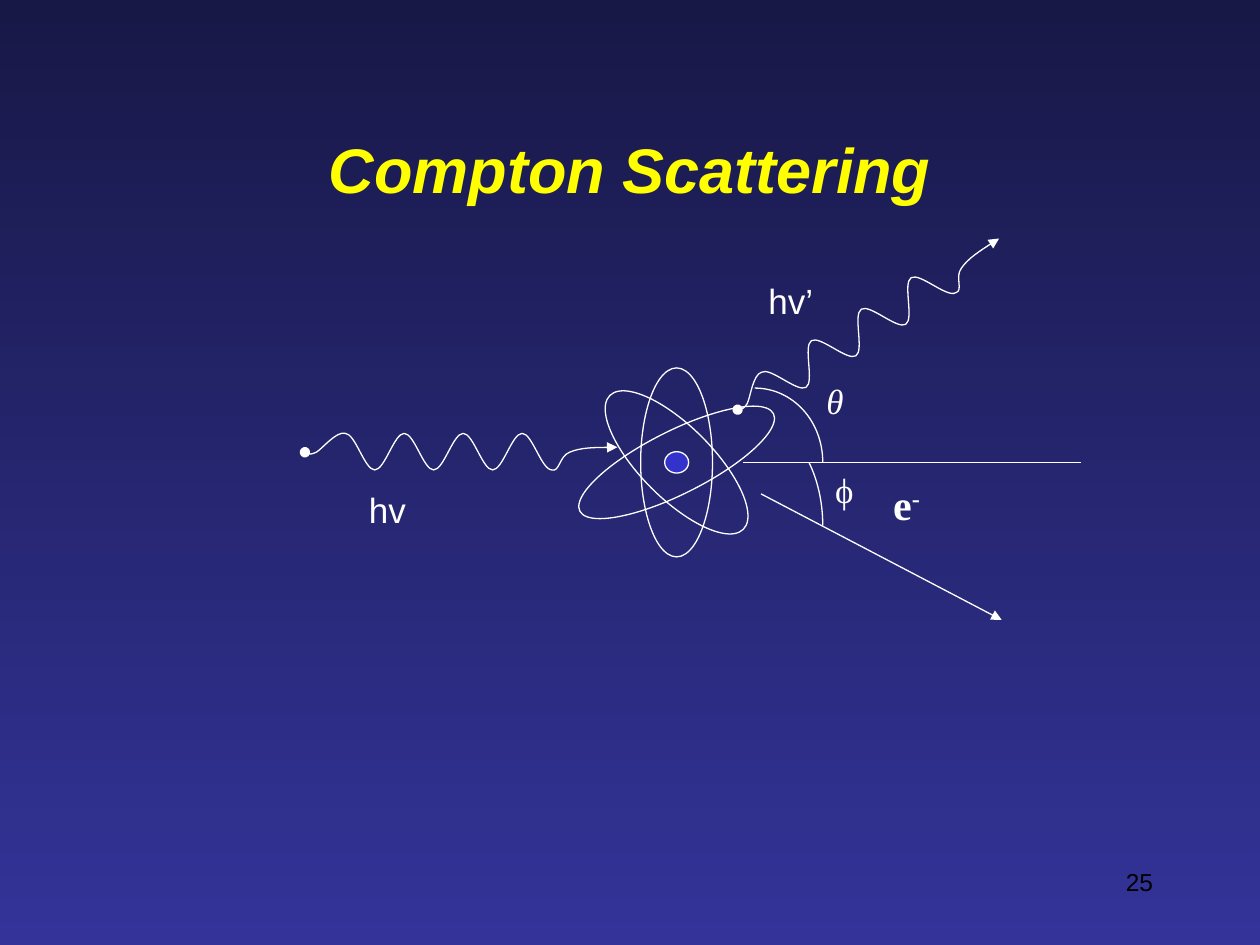
from pptx import Presentation
from pptx.dml.color import RGBColor
from pptx.enum.shapes import MSO_CONNECTOR, MSO_SHAPE
from pptx.enum.text import MSO_ANCHOR, PP_ALIGN
from pptx.oxml.ns import qn
from pptx.oxml.xmlchemy import OxmlElement
from pptx.util import Inches, Pt

ELLIPSE = MSO_SHAPE.OVAL
STRAIGHT = MSO_CONNECTOR.STRAIGHT
LEFT, CENTER, RIGHT = PP_ALIGN.LEFT, PP_ALIGN.CENTER, PP_ALIGN.RIGHT
TOP, MIDDLE = MSO_ANCHOR.TOP, MSO_ANCHOR.MIDDLE
WHITE = "FFFFFF"
SERIF = "Times New Roman"


def color(hex_code):
    """Turn a hex string into a colour."""
    return RGBColor.from_string(hex_code)


def set_background(slide, top_color, bottom_color):
    """Fill the slide with a vertical gradient."""
    fill = slide.background.fill
    fill.gradient()
    fill.gradient_angle = 270
    for stop, hex_code in zip(fill.gradient_stops, (top_color, bottom_color)):
        stop.color.rgb = color(hex_code)


def style_line(line, head=None, tail=None):
    """Make a thin white line with optional end marks."""
    line.color.rgb = color(WHITE)
    line.width = Pt(0.75)
    for tag, mark in (("a:headEnd", head), ("a:tailEnd", tail)):
        if mark:
            end = OxmlElement(tag)
            end.set("type", mark)
            line._get_or_add_ln().append(end)


def add_label(slide, text, left, top, width, height, size=20, font="Arial",
              fill=WHITE, bold=False, italic=False, align=LEFT, anchor=TOP,
              superscript=""):
    """Add one line of text, with an optional superscript after it."""
    frame = slide.shapes.add_textbox(
        Inches(left), Inches(top), Inches(width), Inches(height)).text_frame
    frame.word_wrap = True
    frame.vertical_anchor = anchor
    paragraph = frame.paragraphs[0]
    paragraph.alignment = align
    for part in filter(None, (text, superscript)):
        run = paragraph.add_run()
        run.text = part
        run.font.size = Pt(size)
        run.font.name = font
        run.font.bold = bold
        run.font.italic = italic
        run.font.color.rgb = color(fill)
    if superscript:
        run._r.get_or_add_rPr().set("baseline", "32000")


def add_curve(slide, points, rotation=0, head=None, tail=None):
    """Draw a chain of cubic curves: a start, then three points for each."""
    start, *rest = [(Inches(x), Inches(y)) for x, y in points]
    builder = slide.shapes.build_freeform(*start)
    builder.add_line_segments(rest, close=False)
    curve = builder.convert_to_shape()
    segments = list(curve._element.iter(qn("a:lnTo")))
    for i in range(0, len(segments), 3):
        bezier = OxmlElement("a:cubicBezTo")
        segments[i].addprevious(bezier)
        for segment in segments[i:i + 3]:
            bezier.append(segment[0])
            segment.getparent().remove(segment)
    curve.rotation = rotation
    curve.shadow.inherit = False
    curve.fill.background()
    style_line(curve.line, head, tail)


def add_photon(slide, left, axis, rotation=0):
    """Draw a wavy photon arrow starting at left on its axis."""
    crest, trough, step = -0.15, 0.14, 0.234
    wave = [(0, 0), (0.02, 0.01), (0.04, 0.02), (0.09, 0),
            (0.14, -0.03), (0.25, -0.17), (0.32, crest)]
    for i in range(7):
        x = 0.32 + i * step
        before, after = (trough, crest) if i % 2 else (crest, trough)
        wave += [(x + 0.08, before), (x + step - 0.08, after), (x + step, after)]
    wave[-1] = (1.96, trough)
    wave += [(2.02, 0.16), (2.02, 0.03), (2.1, 0),
             (2.19, -0.04), (2.41, -0.04), (2.48, -0.04)]
    add_curve(slide, [(left + x, axis + y) for x, y in wave],
              rotation, head="oval", tail="triangle")


def add_atom(slide, center_x, center_y):
    """Draw three electron orbits around a nucleus as one group."""
    atom = slide.shapes.add_group_shape()
    parts = ((0.57, 1.5, 0, None), (0.5, 1.72, 63.3, None),
             (0.57, 1.5, 315.1, None), (0.19, 0.17, 0, "3333CC"))
    for width, height, rotation, fill in parts:
        part = atom.shapes.add_shape(
            ELLIPSE, Inches(center_x - width / 2), Inches(center_y - height / 2),
            Inches(width), Inches(height))
        part.rotation = rotation
        part.shadow.inherit = False
        style_line(part.line)
        if fill:
            part.fill.solid()
            part.fill.fore_color.rgb = color(fill)
        else:
            part.fill.background()


def add_ray(slide, start, end, tail=None):
    """Draw a straight line from start to end."""
    ray = slide.shapes.add_connector(
        STRAIGHT, *(Inches(value) for value in (*start, *end)))
    style_line(ray.line, tail=tail)
    ray._element.spPr.append(OxmlElement("a:effectLst"))


def main():
    """Build the Compton scattering slide."""
    deck = Presentation()
    deck.slide_width, deck.slide_height = Inches(10), Inches(7.5)
    slide = deck.slides.add_slide(deck.slide_layouts[6])
    set_background(slide, "181847", "333399")

    add_label(slide, "Compton Scattering", 0.75, 0.67, 8.5, 1.33, size=36,
              fill="FFFF00", bold=True, italic=True, align=CENTER, anchor=MIDDLE)
    add_label(slide, "e", 6.99, 3.75, 1.14, 0.5, size=24, font=SERIF,
              bold=True, superscript="-")

    add_photon(slide, 2.42, 3.59)
    add_photon(slide, 5.66, 2.59, rotation=327.7)
    add_atom(slide, 5.37, 3.67)
    add_ray(slide, (6.04, 3.92), (7.95, 4.92), tail="triangle")
    add_ray(slide, (5.9, 3.67), (8.58, 3.67))
    add_curve(slide, [(5.99, 3.08), (6.29, 3.08), (6.53, 3.34), (6.53, 3.67)])
    add_curve(slide, [(6.42, 3.67), (6.49, 3.81), (6.53, 3.99), (6.53, 4.17)])

    add_label(slide, "ϕ", 6.53, 3.67, 0.45, 0.43, font=SERIF)
    add_label(slide, "θ", 6.46, 2.96, 0.53, 0.43, font=SERIF, italic=True)
    add_label(slide, "hv’", 6, 2.17, 0.8, 0.43)
    add_label(slide, "hv", 2.83, 3.83, 0.74, 0.43)
    add_label(slide, "25", 7.17, 6.83, 2.08, 0.5, size=14, fill="000000",
              align=RIGHT)
    deck.save("out.pptx")


if __name__ == "__main__":
    main()
